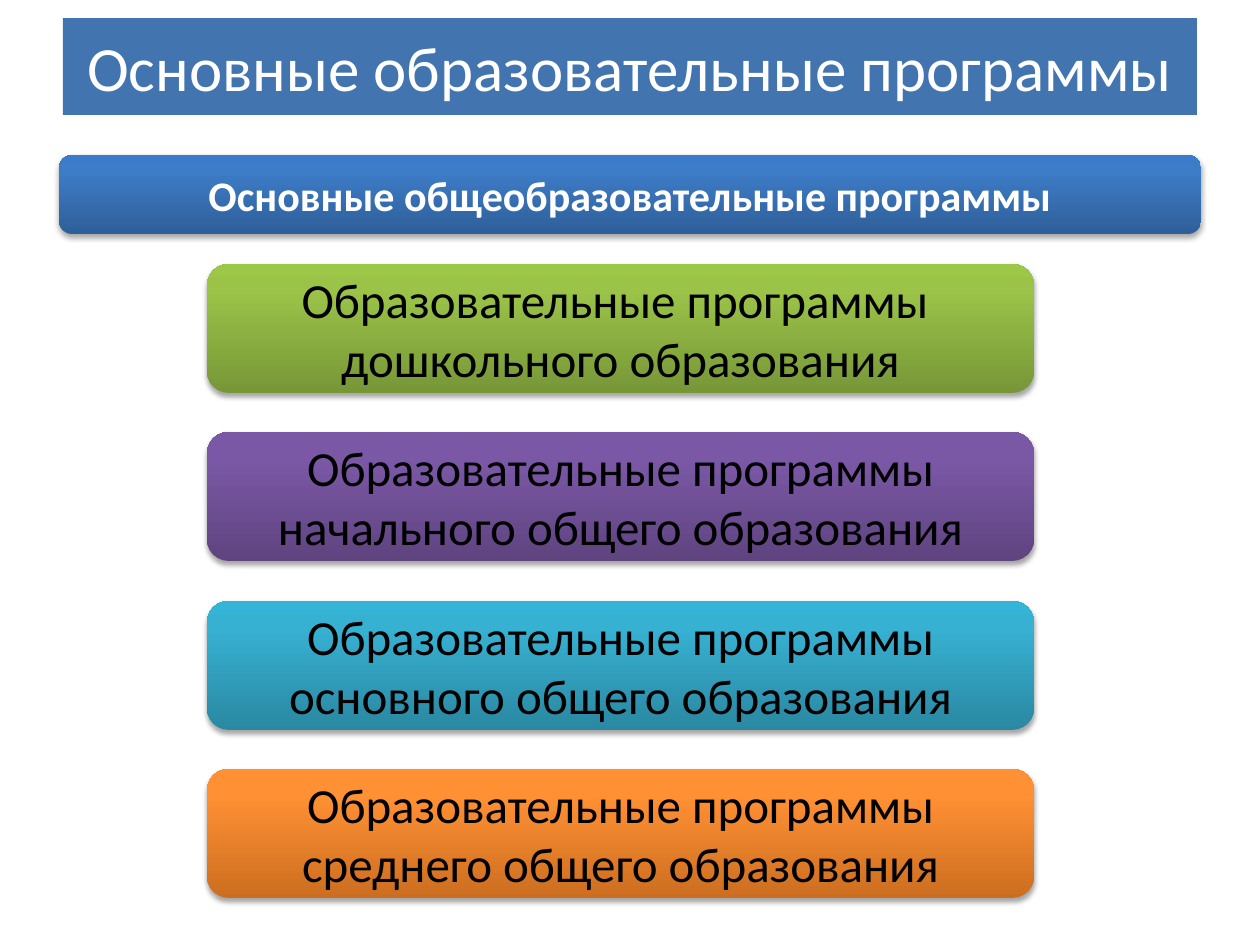
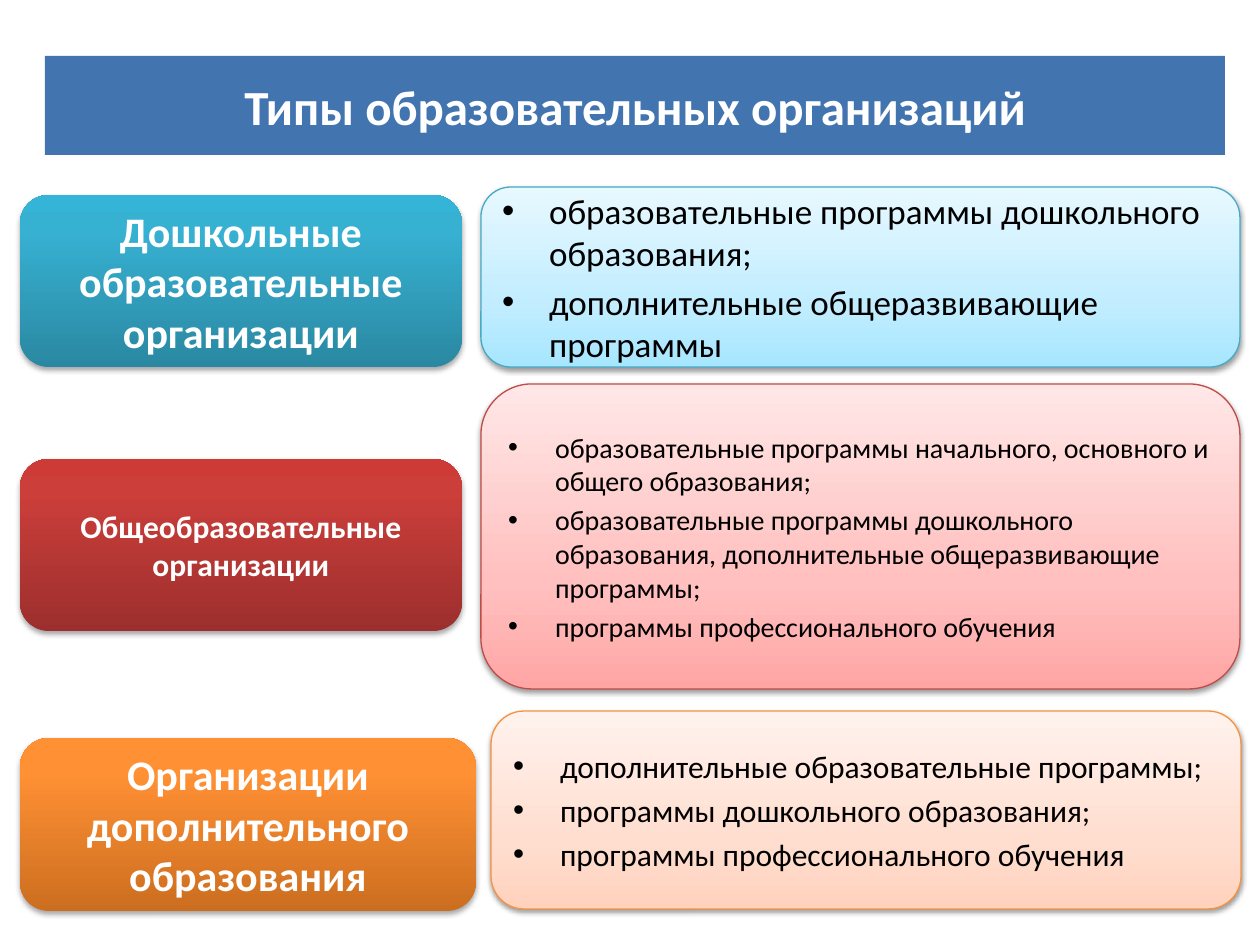
"""Two slides on educational programmes and types of educational organisations."""
from lxml.etree import SubElement
from pptx import Presentation
from pptx.dml.color import RGBColor
from pptx.enum.shapes import MSO_SHAPE
from pptx.enum.text import MSO_ANCHOR, PP_ALIGN
from pptx.oxml.ns import qn
from pptx.util import Pt

PX = 914400 / 126
COLOURS = {"band": "4274B0", "light": "FFFFFF", "dark": "000000",
           "cyan_line": "46AAC5", "red_line": "BF4C48", "orange_line": "F69240"}
GRADIENTS = {
    "blue": ("2F5F99", "3D7CC7", "3A7CCB"),
    "green": ("779737", "9BC348", "9DC746"),
    "purple": ("5F4480", "7B58A6", "7C57A8"),
    "cyan": ("2A88A2", "37B1D2", "34B4D6"),
    "red": ("9C2F2D", "CB3E3A", "CE3B37"),
    "orange": ("CC6E20", "FF9034", "FF9136"),
    "pale_cyan": ("A7E6FF", "C1EDFF", "E7F8FF"),
    "pale_red": ("FFA6A5", "FFC0BF", "FFE7E7"),
    "pale_orange": ("FFD2BD", "FFDED0", "FFF2ED"),
}
LEVELS = [
    ("green", ["Образовательные программы ", "дошкольного образования"]),
    ("purple", ["Образовательные программы начального общего образования"]),
    ("cyan", ["Образовательные программы основного общего образования"]),
    ("orange", ["Образовательные программы среднего общего образования"]),
]
ORGANISATIONS = [
    ("cyan", "Дошкольные образовательные организации", 24, (20, 195, 442, 172),
     20, (481, 187, 759, 180),
     ["образовательные программы дошкольного образования;",
      "дополнительные общеразвивающие программы"]),
    ("red", "Общеобразовательные организации", 18, (20, 459, 442, 172),
     16, (481, 384, 759, 305),
     ["образовательные программы начального, основного и общего образования;",
      "образовательные программы дошкольного образования, "
      "дополнительные общеразвивающие программы;",
      "программы профессионального обучения"]),
    ("orange", "Организации дополнительного образования", 24, (20, 738, 456, 173),
     18, (491, 711, 750, 198),
     ["дополнительные образовательные программы;",
      "программы дошкольного образования;",
      "программы профессионального обучения"]),
]


def px(length):
    """Turn pixels into EMU."""
    return round(length * PX)


def colour(name):
    """Look up a named colour."""
    return RGBColor.from_string(COLOURS[name])


def add_box(slide, kind, place):
    """Add a preset shape without line or shadow."""
    shape = slide.shapes.add_shape(kind, *map(px, place))
    shape.line.fill.background()
    shape.shadow.inherit = False
    return shape


def fill_gradient(shape, name, middle):
    """Fill upwards through three colours, the second at the middle percentage."""
    shape.fill.gradient()
    shape.fill.gradient_angle = 90
    stops = next(shape._element.spPr.iter(qn("a:gsLst")))
    stops.clear()
    for position, value in zip((0, middle, 100), GRADIENTS[name]):
        stop = SubElement(stops, qn("a:gs"), pos=str(position * 1000))
        SubElement(stop, qn("a:srgbClr"), val=value)


def add_shadow(shape, opacity, distance):
    """Drop a soft shadow below the shape."""
    effects = shape._element.spPr.find(qn("a:effectLst"))
    shadow = SubElement(effects, qn("a:outerShdw"), blurRad=str(Pt(3.1)),
                        dist=str(Pt(distance)), dir="5400000", rotWithShape="0")
    black = SubElement(shadow, qn("a:srgbClr"), val=COLOURS["dark"])
    SubElement(black, qn("a:alpha"), val=str(opacity * 1000))


def add_bullet(paragraph):
    """Give the paragraph a round bullet with a hanging indent."""
    properties = paragraph._p.get_or_add_pPr()
    for key, value in {"marL": px(47), "indent": -px(47)}.items():
        properties.set(key, str(value))
    SubElement(properties, qn("a:buFont"), typeface="Arial")
    SubElement(properties, qn("a:buChar"), char="•")


def write(shape, lines, size, ink="light", bold=False, space=0, bullets=False):
    """Write one paragraph per line, centred or bulleted."""
    frame = shape.text_frame
    for key, value in {"word_wrap": True, "vertical_anchor": MSO_ANCHOR.MIDDLE}.items():
        setattr(frame, key, value)
    for index, line in enumerate(lines):
        paragraph = frame.paragraphs[0] if index == 0 else frame.add_paragraph()
        paragraph.alignment = PP_ALIGN.LEFT if bullets else PP_ALIGN.CENTER
        paragraph.space_before = Pt(size * space)
        if bullets:
            add_bullet(paragraph)
        run = paragraph.add_run()
        run.text = line
        for key, value in {"name": "Calibri", "size": Pt(size), "bold": bold}.items():
            setattr(run.font, key, value)
        run.font.color.rgb = colour(ink)


def add_title(slide, text, place, size, bold=False):
    """Add the flat title band."""
    band = add_box(slide, MSO_SHAPE.RECTANGLE, place)
    band.fill.solid()
    band.fill.fore_color.rgb = colour("band")
    write(band, [text], size, bold=bold)


def add_card(slide, gradient, place, lines, size, **text_format):
    """Add a saturated rounded card."""
    card = add_box(slide, MSO_SHAPE.ROUNDED_RECTANGLE, place)
    fill_gradient(card, gradient, 80)
    add_shadow(card, 35, 1.8)
    write(card, lines, size, **text_format)


def add_panel(slide, tone, place, lines, size):
    """Add a pale outlined panel with a bulleted list."""
    panel = add_box(slide, MSO_SHAPE.ROUNDED_RECTANGLE, place)
    fill_gradient(panel, f"pale_{tone}", 35)
    panel.line.color.rgb = colour(f"{tone}_line")
    panel.line.width = Pt(0.75)
    add_shadow(panel, 38, 1.6)
    write(panel, lines, size, ink="dark", space=0.2, bullets=True)


def build_programmes(slide):
    """Stack the levels of general education under their heading."""
    add_title(slide, "Основные образовательные программы", (63, 18, 1134, 97), 36)
    add_card(slide, "blue", (59, 155, 1142, 79),
             ["Основные общеобразовательные программы"], 24, bold=True)
    for index, (gradient, lines) in enumerate(LEVELS):
        add_card(slide, gradient, (207, 264 + index * 337 // 2, 827, 129),
                 lines, 28, ink="dark")


def build_organisations(slide):
    """Pair each type of organisation with its programmes."""
    add_title(slide, "Типы образовательных организаций", (45, 56, 1180, 99), 28, bold=True)
    for tone, name, name_size, card, list_size, panel, programmes in ORGANISATIONS:
        add_card(slide, tone, card, [name], name_size, bold=True, space=0.2)
        add_panel(slide, tone, panel, programmes, list_size)


def main():
    """Build and save the presentation."""
    presentation = Presentation()
    presentation.slide_width, presentation.slide_height = px(1260), px(945)
    for build in (build_programmes, build_organisations):
        build(presentation.slides.add_slide(presentation.slide_layouts[6]))
    presentation.save("out.pptx")


if __name__ == "__main__":
    main()
